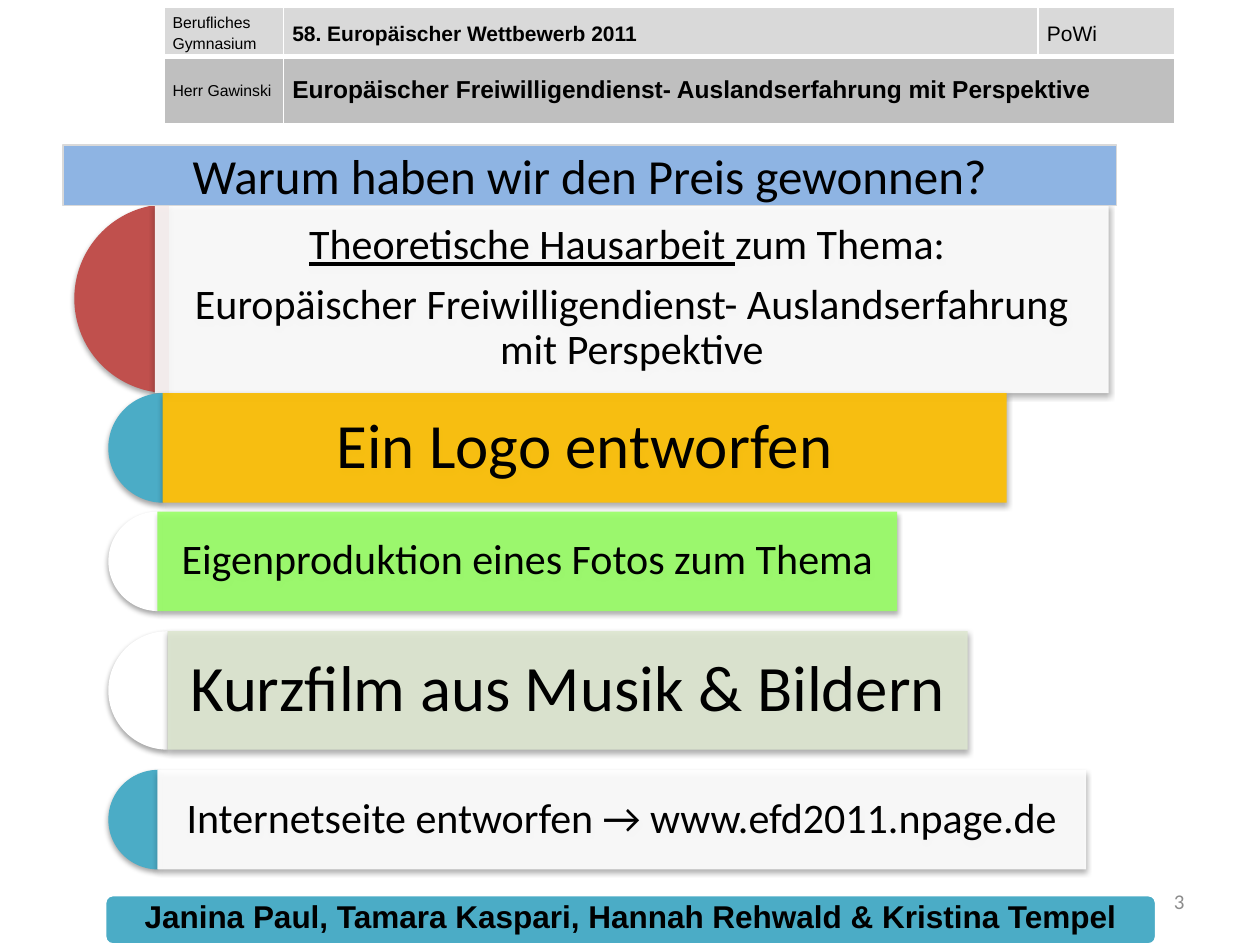
from lxml import etree
from pptx import Presentation
from pptx.dml.color import RGBColor
from pptx.enum.shapes import MSO_SHAPE as Shape
from pptx.enum.text import MSO_ANCHOR as Anchor, PP_ALIGN as Align
from pptx.oxml.ns import qn
from pptx.util import Inches, Pt

TOPIC = "Europäischer Freiwilligendienst- Auslandserfahrung mit Perspektive"

# pie left, top, diameter, bar left, bar width, pie colour, bar colour, size, text
REASONS = [
    (0.59, 1.62, 1.5, 1.23, 7.57, "C0504D", "FFFFFF", 24,
     "Theoretische Hausarbeit zum Thema: \n" + TOPIC),
    (0.86, 3.12, 0.87, 1.29, 6.7, "4BACC6", "FFC000", 36, "Ein Logo entworfen"),
    (0.86, 4.06, 0.79, 1.25, 5.87, "FFFFFF", "99FF66", 24,
     "Eigenproduktion eines Fotos zum Thema"),
    (0.86, 5.01, 0.94, 1.33, 6.35, "FFFFFF", "DEE7D1", 37,
     "Kurzfilm aus Musik & Bildern"),
    (0.86, 6.11, 0.79, 1.25, 7.37, "4BACC6", "FFFFFF", 24,
     "Internetseite entworfen → www.efd2011.npage.de"),
]


def color(value):
    return RGBColor.from_string(value)


def format_font(font, name, size, value="000000", bold=False):
    font.name, font.size, font.bold = name, Pt(size), bold
    font.color.rgb = color(value)


def set_insets(target, horizontal, vertical):
    target.margin_left = target.margin_right = Inches(horizontal)
    target.margin_top = target.margin_bottom = Inches(vertical)


def add_box(slide, kind, left, top, width, height, fill, line=None, line_width=0.75):
    shape = slide.shapes.add_shape(
        kind, Inches(left), Inches(top), Inches(width), Inches(height))
    shape.shadow.inherit = False
    shape.fill.solid()
    shape.fill.fore_color.rgb = color(fill)
    if line:
        shape.line.color.rgb = color(line)
        shape.line.width = Pt(line_width)
    else:
        shape.line.fill.background()
    return shape


def write_text(shape, text, font_name, size, value="000000", bold=False,
               align=Align.CENTER, anchor=Anchor.MIDDLE, insets=(0.1, 0.05)):
    frame = shape.text_frame
    frame.word_wrap = True
    frame.vertical_anchor = anchor
    set_insets(frame, *insets)
    frame.text = text
    for paragraph in frame.paragraphs:
        paragraph.alignment = align
        for run in paragraph.runs:
            format_font(run.font, font_name, size, value, bold)
    return frame


def add_shadow(shape):
    effects = shape._element.spPr.find(qn("a:effectLst"))
    shadow = etree.SubElement(effects, qn("a:outerShdw"), blurRad=str(Pt(3.1)),
                              dist=str(Pt(1.8)), dir="5400000", rotWithShape="0")
    black = etree.SubElement(shadow, qn("a:srgbClr"), val="000000")
    etree.SubElement(black, qn("a:alpha"), val="35000")


def set_opacity(shape, percent):
    fill = shape._element.spPr.find(qn("a:solidFill"))
    etree.SubElement(fill[0], qn("a:alpha"), val=str(percent * 1000))


def add_reason(slide, left, top, size, bar_left, bar_width, pie_fill, bar_fill,
               font_size, text):
    # Left half of a disc, then the bar beside it
    pie = add_box(slide, Shape.PIE, left, top, size, size, pie_fill)
    pie.adjustments[0], pie.adjustments[1] = 54, 162
    bar = add_box(slide, Shape.RECTANGLE, bar_left, top, bar_width, size, bar_fill)
    set_opacity(bar, 90)
    for shape in (pie, bar):
        add_shadow(shape)
    inset = 0.1 if font_size == 24 else 0.15
    frame = write_text(bar, text, "Calibri", font_size, insets=(inset, inset))
    for paragraph in frame.paragraphs:
        paragraph.line_spacing = 0.9
        paragraph.space_after = Pt(round(font_size * 0.35, 1))
    return frame


def underline_start(paragraph, length):
    first = paragraph.runs[0]
    rest = paragraph.add_run()
    rest.text, first.text = first.text[length:], first.text[:length]
    format_font(rest.font, first.font.name, first.font.size.pt)
    first.font.underline = True


def set_borders(cell, widths):
    properties = cell._tc.get_or_add_tcPr()
    for side, width in zip("LRTB", widths):
        line = etree.SubElement(properties, qn(f"a:ln{side}"), w=str(Pt(width)))
        fill = etree.SubElement(line, qn("a:solidFill"))
        etree.SubElement(fill, qn("a:srgbClr"), val="FFFFFF")


def add_header_table(slide):
    rows = [
        (0.39, "D9D9D9", (1, 1, 1, 3), 1.15,
         [("Berufliches Gymnasium", 9, False),
          ("58. Europäischer Wettbewerb 2011", 12, True),
          ("PoWi", 12, False)]),
        (0.53, "BFBFBF", (1, 1, 3, 1), 1.0,
         [("Herr Gawinski", 9, False), (TOPIC, 14, True), ("", 14, True)]),
    ]
    table = slide.shapes.add_table(
        2, 3, Inches(1.3), Inches(0.06), Inches(8.02), Inches(0.92)).table
    table.first_row = table.horz_banding = False
    for column, width in zip(table.columns, (0.95, 5.99, 1.08)):
        column.width = Inches(width)
    for r, (height, fill, borders, spacing, entries) in enumerate(rows):
        table.rows[r].height = Inches(height)
        for c, (text, size, bold) in enumerate(entries):
            cell = table.cell(r, c)
            set_borders(cell, borders)
            cell.fill.solid()
            cell.fill.fore_color.rgb = color(fill)
            cell.vertical_anchor = Anchor.MIDDLE
            set_insets(cell, 0.07, 0)
            paragraph = cell.text_frame.paragraphs[0]
            paragraph.text = text
            paragraph.line_spacing = 1.15 if c == 0 else spacing
            format_font(paragraph.font, "Arial", size, bold=bold)
            for run in paragraph.runs:
                format_font(run.font, "Arial", size, bold=bold)
    table.cell(1, 1).merge(table.cell(1, 2))


def main():
    presentation = Presentation()
    presentation.slide_width, presentation.slide_height = Inches(10), Inches(7.5)
    slide = presentation.slides.add_slide(presentation.slide_layouts[6])

    add_header_table(slide)

    # Reasons for the prize
    frames = [add_reason(slide, *reason) for reason in REASONS]
    underline_start(frames[0].paragraphs[0], len("Theoretische Hausarbeit "))

    # Slide number
    number = slide.shapes.add_textbox(
        Inches(7.17), Inches(6.95), Inches(2.33), Inches(0.4))
    write_text(number, "3", "Calibri", 12, "8C8C8C", align=Align.RIGHT)

    # Title
    title = add_box(slide, Shape.RECTANGLE, 0.5, 1.15, 8.36, 0.48, "8EB4E3", "D9D9D9")
    write_text(title, "Warum haben wir den Preis gewonnen?", "Calibri", 28)

    # Authors
    authors = add_box(slide, Shape.ROUNDED_RECTANGLE, 0.83, 7.1, 8.35, 0.4,
                      "4BACC6", "FFFFFF", 2)
    write_text(authors, "Janina Paul, Tamara Kaspari, Hannah Rehwald & Kristina Tempel",
               "Arial", 18, bold=True, anchor=Anchor.TOP, insets=(0.07, 0))

    presentation.save("out.pptx")


if __name__ == "__main__":
    main()
